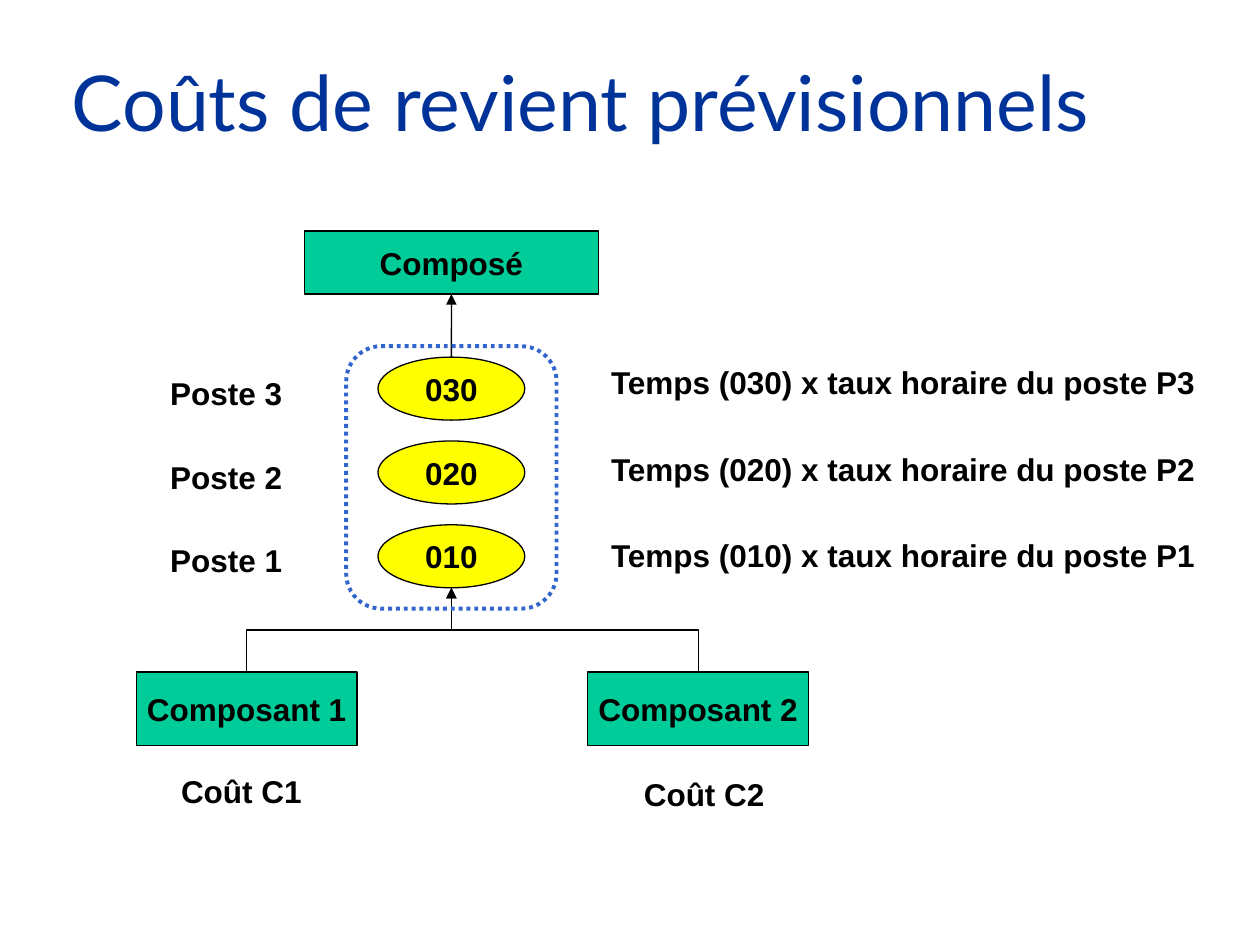
from dataclasses import dataclass

from lxml.etree import SubElement
from pptx import Presentation
from pptx.dml.color import RGBColor
from pptx.enum.dml import MSO_LINE_DASH_STYLE as Dash
from pptx.enum.shapes import MSO_CONNECTOR as Conn, MSO_SHAPE as Shape
from pptx.enum.text import MSO_ANCHOR as Anchor, MSO_AUTO_SIZE as AutoSize, PP_ALIGN as Align
from pptx.oxml.ns import qn
from pptx.util import Cm, Pt

COLORS = {"title": "003399", "box": "00CC99", "step": "FFFF00",
          "frame": "3366CC", "ink": "000000"}
AXIS = 9.1          # centre line of the routing, cm
STEP_TOP, STEP_GAP, STEP_H = 7.2, 1.69, 1.27


@dataclass
class Node:
    text: str
    left: float
    top: float
    width: float
    height: float
    kind: Shape = Shape.RECTANGLE
    fill: str = "box"


@dataclass
class Label:
    text: str
    left: float
    top: float
    width: float


def rgb(name: str) -> RGBColor:
    return RGBColor.from_string(COLORS[name])


def write(tf, text: str, *, font="Arial", size=18, bold=True, color="ink",
          align=Align.LEFT, anchor=Anchor.TOP, wrap=False) -> None:
    tf.word_wrap = wrap
    tf.vertical_anchor = anchor
    p = tf.paragraphs[0]
    p.alignment = align
    r = p.add_run()
    r.text = text
    r.font.name, r.font.size, r.font.bold = font, Pt(size), bold
    r.font.color.rgb = rgb(color)


def set_line(s, color="ink", width=0.75) -> None:
    s.line.color.rgb = rgb(color)
    s.line.width = Pt(width)


def draw_node(slide, n: Node):
    s = slide.shapes.add_shape(n.kind, Cm(n.left), Cm(n.top), Cm(n.width), Cm(n.height))
    s.shadow.inherit = False
    s.fill.solid()
    s.fill.fore_color.rgb = rgb(n.fill)
    set_line(s)
    write(s.text_frame, n.text, align=Align.CENTER, anchor=Anchor.MIDDLE)
    return s


def draw_label(slide, lb: Label) -> None:
    sp = slide.shapes.add_textbox(Cm(lb.left), Cm(lb.top), Cm(lb.width), Cm(1.02))
    write(sp.text_frame, lb.text)
    sp.text_frame.auto_size = AutoSize.SHAPE_TO_FIT_TEXT


def draw_arrow(slide, kind: Conn):
    c = slide.shapes.add_connector(kind, 0, 0, 0, 0)
    set_line(c)
    SubElement(c.line._get_or_add_ln(), qn("a:tailEnd"), type="triangle")
    SubElement(c._element.spPr, qn("a:effectLst"))
    return c


def draw_rising_elbow(slide, box, end_x: int, end_y: int) -> None:
    """Arrow that leaves the top of a box upwards, turns, and ends upwards."""
    c = draw_arrow(slide, Conn.ELBOW)
    c.begin_connect(box, 0)
    start_x, start_y = box.left + box.width // 2, box.top
    # The frame is turned a quarter, so width and height change places
    rise, run = start_y - end_y, abs(end_x - start_x)
    c.left = (start_x + end_x - rise) // 2
    c.top = (start_y + end_y - run) // 2
    c.width, c.height = rise, run
    xfrm = c._element.spPr.find(qn("a:xfrm"))
    for name in ("flipH", "flipV"):
        xfrm.attrib.pop(name, None)
    if end_x > start_x:
        xfrm.set("rot", str(270 * 60000))
    else:
        xfrm.set("rot", str(90 * 60000))
        xfrm.set("flipH", "1")


def main() -> None:
    prs = Presentation()
    prs.slide_width, prs.slide_height = Cm(25.4), Cm(19.05)
    slide = prs.slides.add_slide(prs.slide_layouts[5])

    # Title
    title = slide.shapes.title
    title.left, title.top, title.width, title.height = Cm(0.64), Cm(0.43), Cm(21.59), Cm(3.18)
    write(title.text_frame, "Coûts de revient prévisionnels", font="Lato", size=44,
          bold=False, color="title", align=Align.RIGHT, anchor=Anchor.MIDDLE, wrap=True)

    # Product, routing steps from last to first, and components
    product = draw_node(slide, Node("Composé", AXIS - 2.96, 4.66, 5.92, 1.27))
    steps = [draw_node(slide, Node(f"0{3 - i}0", AXIS - 1.48, STEP_TOP + i * STEP_GAP,
                                   2.96, STEP_H, Shape.OVAL, "step"))
             for i in range(3)]
    components = [draw_node(slide, Node(f"Composant {i}", left, 13.55, 4.45, 1.48))
                  for i, left in ((1, 2.75), (2, 11.85))]

    # Flow from components through the routing to the product
    for box in components:
        draw_rising_elbow(slide, box, Cm(AXIS), steps[-1].top + steps[-1].height)
    up = draw_arrow(slide, Conn.STRAIGHT)
    up.begin_connect(steps[0], 0)
    up.end_connect(product, 2)

    # Dotted frame around the routing
    frame = slide.shapes.add_shape(Shape.ROUNDED_RECTANGLE, Cm(AXIS - 2.12), Cm(6.98),
                                   Cm(4.24), Cm(5.29))
    frame.shadow.inherit = False
    frame.fill.background()
    set_line(frame, "frame", 2.25)
    frame.line.dash_style = Dash.ROUND_DOT

    # Work centres, their costs, and component costs
    labels = [Label("Coût C1", 3.4, 15.44, 2.95), Label("Coût C2", 12.73, 15.49, 2.95)]
    for i in range(3):
        n = 3 - i
        labels.append(Label(f"Poste {n}", 3.18, 7.41 + i * STEP_GAP, 2.77))
        labels.append(Label(f"Temps (0{n}0) x taux horaire du poste P{n}",
                            12.07, 7.2 + i * 1.74, 12.32))
    for lb in labels:
        draw_label(slide, lb)

    prs.save("out.pptx")


if __name__ == "__main__":
    main()
